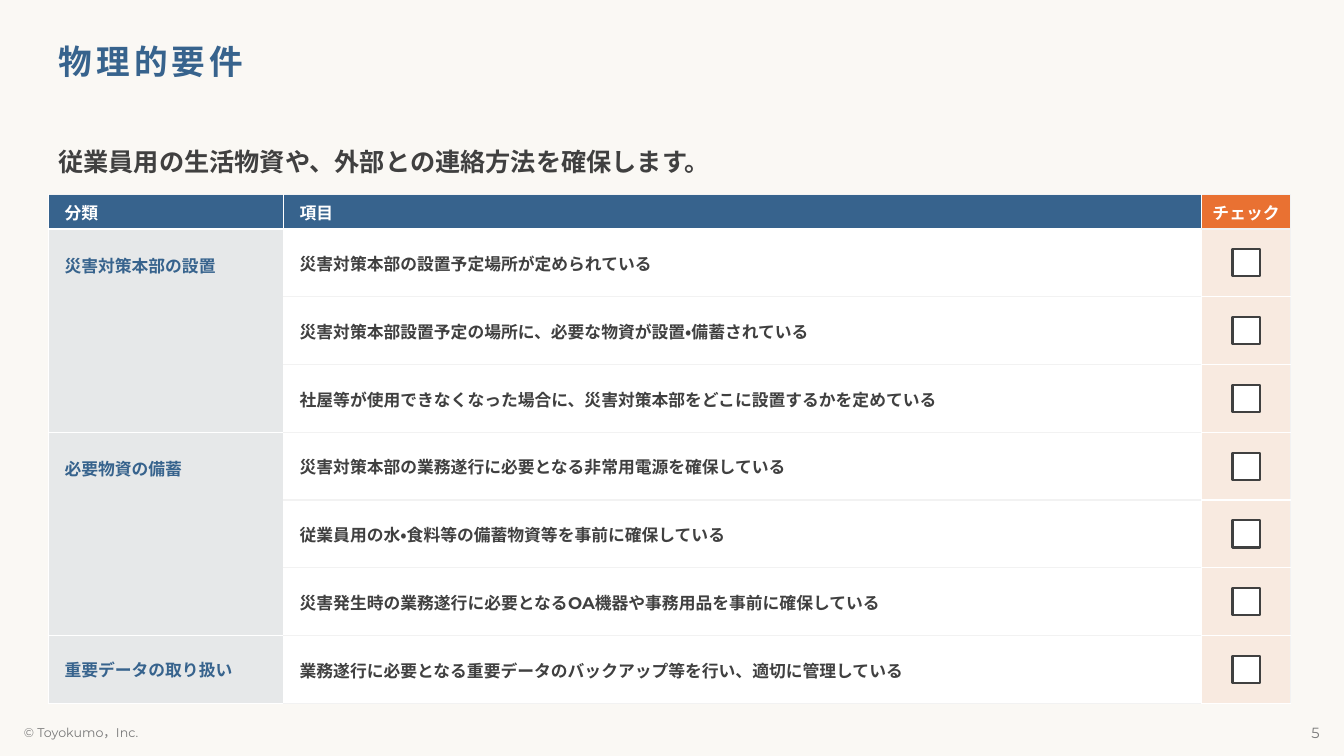
from dataclasses import dataclass

from lxml import etree
from pptx import Presentation
from pptx.dml.color import RGBColor as RGB
from pptx.enum.lang import MSO_LANGUAGE_ID as LANG
from pptx.enum.shapes import MSO_SHAPE as SHAPE
from pptx.enum.text import MSO_ANCHOR as ANCHOR, PP_ALIGN as ALIGN
from pptx.oxml.ns import qn
from pptx.util import Pt


@dataclass(frozen=True)
class Theme:
    font: str = "Montserrat"
    paper: str = "FAF8F4"
    blue: str = "37638D"
    orange: str = "E97132"
    ink: str = "404040"
    muted: str = "797979"
    white: str = "FFFFFF"
    rule: str = "F2F2F2"
    title: float = 24
    lead: float = 18
    body: float = 12
    page: float = 10.5
    small: float = 9
    tint: int = 10  # percent opacity of pale cells


T = Theme()

HEADER = ["分類", "項目", "チェック"]
CHECKLIST = {
    "災害対策本部の設置": [
        "災害対策本部の設置予定場所が定められている",
        "災害対策本部設置予定の場所に、必要な物資が設置・備蓄されている",
        "社屋等が使用できなくなった場合に、災害対策本部をどこに設置するかを定めている",
    ],
    "必要物資の備蓄": [
        "災害対策本部の業務遂行に必要となる非常用電源を確保している",
        "従業員用の水・食料等の備蓄物資等を事前に確保している",
        "災害発生時の業務遂行に必要となるOA機器や事務用品を事前に確保している",
    ],
    "重要データの取り扱い": [
        "業務遂行に必要となる重要データのバックアップ等を行い、適切に管理している",
    ],
}


def write(tf, text, size, color, bold=False, align=ALIGN.LEFT):
    p = tf.paragraphs[0]
    p.text = text
    p.alignment = align
    f = p.font
    f.name, f.size, f.bold = T.font, Pt(size), bold
    f.color.rgb = RGB.from_string(color)
    f.language_id = LANG.JAPANESE
    return p


def set_margins(target, left, top, right, bottom):
    target.margin_left, target.margin_top = Pt(left), Pt(top)
    target.margin_right, target.margin_bottom = Pt(right), Pt(bottom)


def add_title(s, text, x, y, w, h):
    sp = s.shapes.title
    sp.left, sp.top, sp.width, sp.height = Pt(x), Pt(y), Pt(w), Pt(h)
    tf = sp.text_frame
    tf.vertical_anchor = ANCHOR.MIDDLE
    set_margins(tf, 7.2, 5.8, 7.2, 3.6)
    p = write(tf, text, T.title, T.blue, bold=True)
    p.line_spacing = 0.9
    p._p.pPr.find(qn("a:defRPr")).set("spc", "300")


def add_text(s, text, x, y, w, h, size, color, **style):
    tf = s.shapes.add_textbox(Pt(x), Pt(y), Pt(w), Pt(h)).text_frame
    tf.word_wrap = True
    tf.vertical_anchor = ANCHOR.MIDDLE
    write(tf, text, size, color, **style)


def paint(cell, color, alpha=100, **borders):
    """Fill a cell and rule its edges; edges not named are white."""
    cell.fill.solid()
    cell.fill.fore_color.rgb = RGB.from_string(color)
    tcPr = cell._tc.get_or_add_tcPr()
    if alpha < 100:
        clr = tcPr.find(qn("a:solidFill")).find(qn("a:srgbClr"))
        etree.SubElement(clr, qn("a:alpha"), val=str(alpha * 1000))
    for i, edge in enumerate("LRTB"):
        ln = etree.Element(qn("a:ln" + edge), w=str(Pt(1)))
        fill = etree.SubElement(ln, qn("a:solidFill"))
        etree.SubElement(fill, qn("a:srgbClr"), val=borders.get(edge, T.white))
        tcPr.insert(i, ln)


def fill_cell(cell, text, color, margins, anchor=ANCHOR.MIDDLE, align=ALIGN.LEFT):
    set_margins(cell, *margins)
    cell.vertical_anchor = anchor
    write(cell.text_frame, text, T.body, color, bold=True, align=align)


def add_checkbox(s, cx, cy, size=19.4):
    sp = s.shapes.add_shape(SHAPE.ROUNDED_RECTANGLE, Pt(cx - size / 2),
                            Pt(cy - size / 2), Pt(size), Pt(size))
    sp.adjustments[0] = 0
    sp.shadow.inherit = False
    sp.fill.solid()
    sp.fill.fore_color.rgb = RGB.from_string(T.white)
    sp.line.color.rgb = RGB.from_string(T.ink)
    sp.line.width = Pt(1.5)


def add_checklist(s, x, y, w, h, head_h=24.6, group_w=168, check_w=64):
    count = sum(len(items) for items in CHECKLIST.values())
    row_h = (h - head_h) / count
    tbl = s.shapes.add_table(count + 1, 3, Pt(x), Pt(y), Pt(w), Pt(h)).table
    for col, width in zip(tbl.columns, (group_w, w - group_w - check_w, check_w)):
        col.width = Pt(width)
    for i, row in enumerate(tbl.rows):
        row.height = Pt(row_h if i else head_h)

    # Header row
    for c, text in enumerate(HEADER):
        cell, last = tbl.cell(0, c), c == 2
        fill_cell(cell, text, T.white, (7.2 if last else 11.5, 3.6, 7.2, 3.6),
                  align=ALIGN.CENTER if last else ALIGN.LEFT)
        edge = T.rule if last else T.white
        paint(cell, T.orange if last else T.blue, T=T.rule, R=edge, B=edge)

    # Groups, items and checkboxes
    r = 1
    for group, items in CHECKLIST.items():
        first, span = tbl.cell(r, 0), len(items)
        if span > 1:
            first.merge(tbl.cell(r + span - 1, 0))
        fill_cell(first, group, T.blue, (11.5, 17.3 if span > 1 else 0, 0.7, 0),
                  ANCHOR.TOP if span > 1 else ANCHOR.MIDDLE)
        for item in items:
            paint(tbl.cell(r, 0), T.blue, T.tint)
            fill_cell(tbl.cell(r, 1), item, T.ink, (11.5, 0.7, 0.7, 0))
            paint(tbl.cell(r, 1), T.white, T=T.white if r == 1 else T.rule, B=T.rule)
            paint(tbl.cell(r, 2), T.orange, T.tint,
                  T=T.rule if r == 1 else T.white, R=T.rule)
            add_checkbox(s, x + w - check_w / 2, y + head_h + (r - 0.5) * row_h)
            r += 1


def add_footer(s, x, y, w, h):
    add_text(s, "© Toyokumo，Inc.", x, y, 282, h, T.small, T.muted)
    add_text(s, "5", x + w - 216, y, 216, h, T.page, T.muted, align=ALIGN.RIGHT)


def main():
    prs = Presentation()
    prs.slide_width, prs.slide_height = Pt(960), Pt(540)
    s = prs.slides.add_slide(prs.slide_layouts[5])
    s.background.fill.solid()
    s.background.fill.fore_color.rgb = RGB.from_string(T.paper)

    add_title(s, "物理的要件", 34.6, 20.2, 887.5, 47.5)
    add_footer(s, 10, 513.4, 939.6, 19.4)
    add_text(s, "従業員用の生活物資や、外部との連絡方法を確保します。",
             34.6, 91.4, 890, 47.5, T.lead, T.ink, bold=True)
    add_checklist(s, 34.6, 139, 887.5, 363.4)
    prs.save("out.pptx")


if __name__ == "__main__":
    main()
